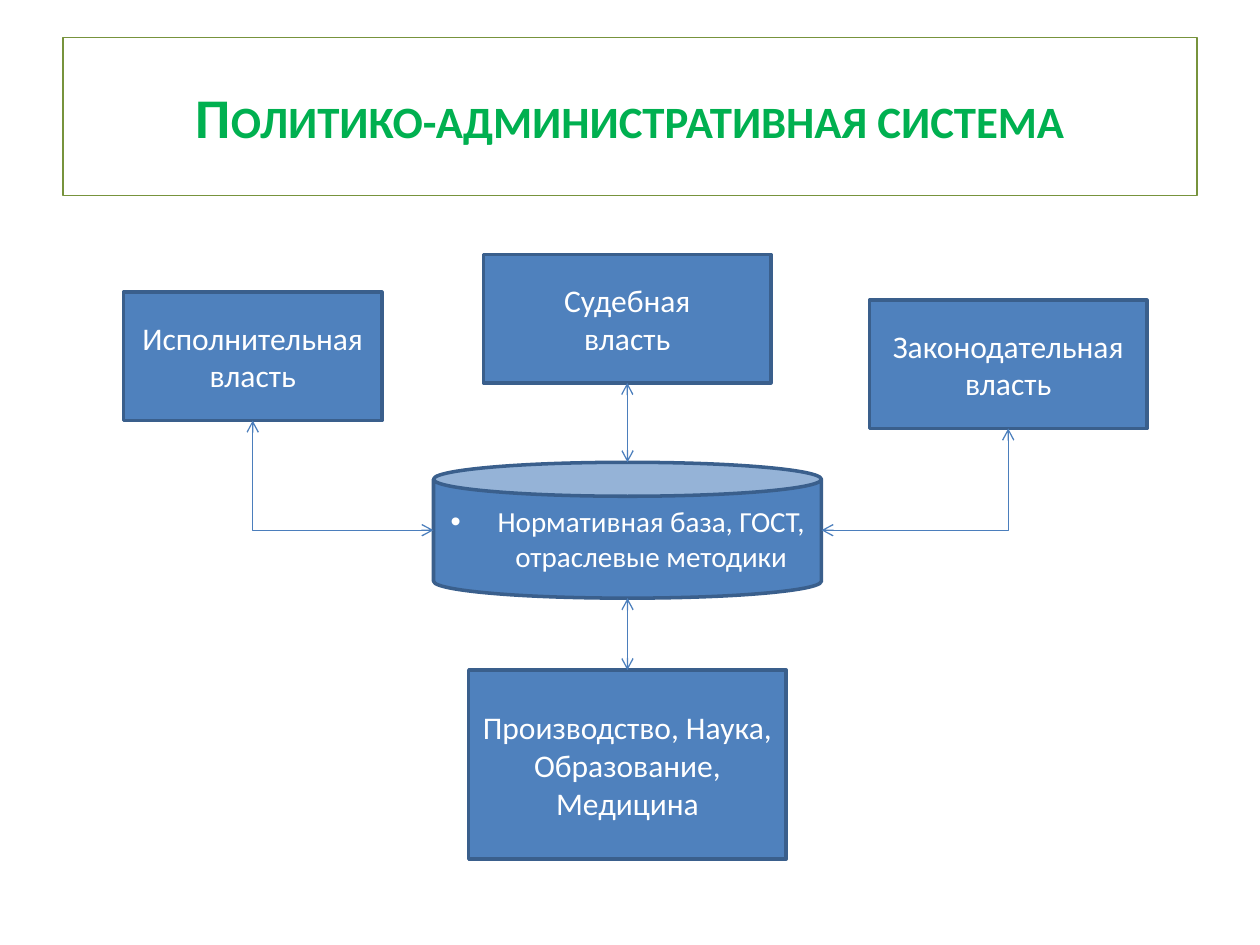
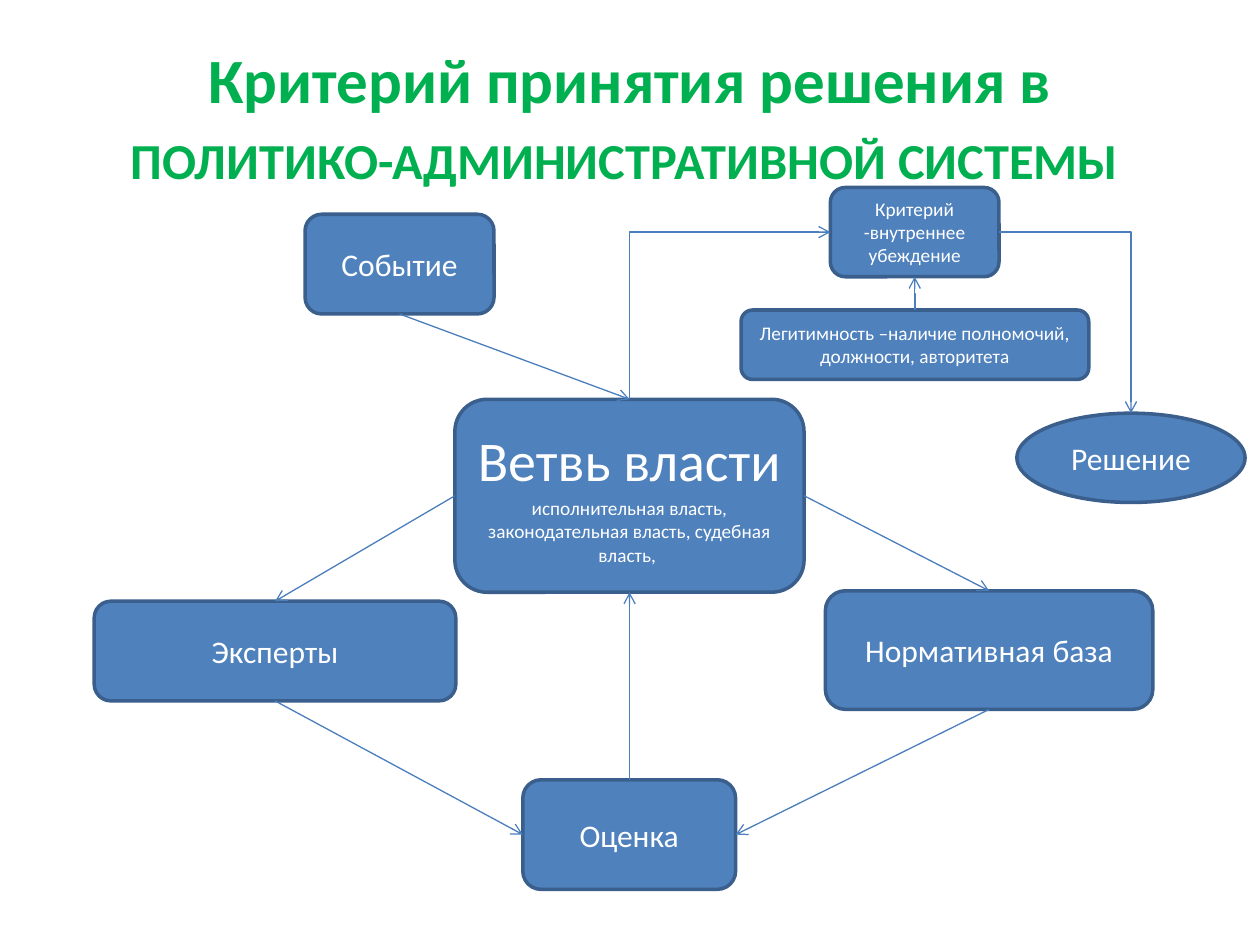
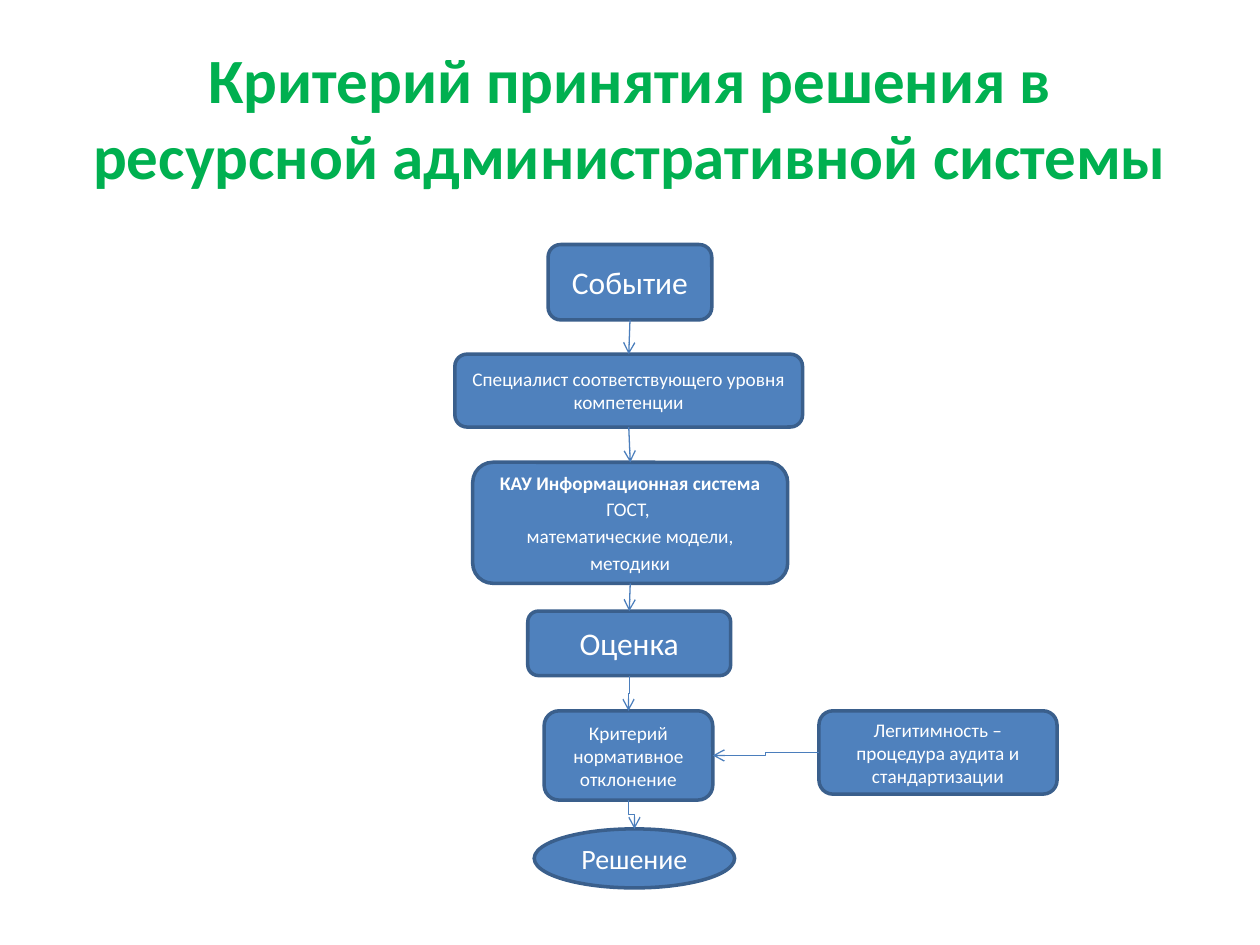
from lxml.etree import SubElement
from pptx import Presentation
from pptx.dml.color import RGBColor
from pptx.enum.shapes import MSO_CONNECTOR, MSO_SHAPE
from pptx.enum.text import MSO_ANCHOR, PP_ALIGN
from pptx.oxml.ns import qn
from pptx.util import Cm, Pt

# Shared look
FONT = "Calibri"
GREEN, FRAME = "00B050", "77933C"
BLUE, EDGE, WIRE, WHITE = "4F81BD", "3A5F8C", "4B7EBC", "FFFFFF"
HEAD = (1.27, 0.76, 22.86, 3.18)
RECT, ROUND = MSO_SHAPE.RECTANGLE, MSO_SHAPE.ROUNDED_RECTANGLE
OVAL, CAN = MSO_SHAPE.OVAL, MSO_SHAPE.CAN
TOP, LEFT, BOTTOM, RIGHT = range(4)


def paint(color, code):
    color.rgb = RGBColor.from_string(code)


def style(para, size, code, bold=False):
    para.alignment = PP_ALIGN.CENTER
    font = para.font
    font.name, font.size, font.bold = FONT, Pt(size), bold
    paint(font.color, code)


def frame(shape):
    text = shape.text_frame
    text.word_wrap = True
    text.vertical_anchor = MSO_ANCHOR.MIDDLE
    return text


def title(slide, box, runs, size, edge=None):
    """Green heading; each run is (text, small caps)."""
    shape = slide.shapes.add_textbox(*map(Cm, box))
    if edge:
        paint(shape.line.color, edge)
        shape.line.width = Pt(0.75)
    para = frame(shape).paragraphs[0]
    for words, small in runs:
        run = para.add_run()
        run.text = words
        if small:
            run._r.get_or_add_rPr().set("cap", "small")
    style(para, size, GREEN, True)


def bullet(para):
    props = para._p.get_or_add_pPr()
    props.set("marL", str(Cm(0.95)))
    props.set("indent", str(Cm(-0.95)))
    SubElement(props, qn("a:buFont")).set("typeface", "Arial")
    SubElement(props, qn("a:buChar")).set("char", "•")


def node(slide, box, kind, place, lines, gap=0, dot=False):
    """Blue shape placed within box; each line is (text, size[, bold])."""
    x, y, w, h = place
    shape = slide.shapes.add_shape(
        kind, Cm(box[0] + x), Cm(box[1] + y), Cm(w), Cm(h))
    shape.shadow.inherit = False
    shape.fill.solid()
    paint(shape.fill.fore_color, BLUE)
    paint(shape.line.color, EDGE)
    shape.line.width = Pt(2)
    text = frame(shape)
    for i, (words, size, *bold) in enumerate(lines):
        para = text.add_paragraph() if i else text.paragraphs[0]
        para.text = words
        if dot:
            bullet(para)
        if gap:
            para.space_before = Pt(round(size * gap, 1))
        style(para, size, WHITE, bool(bold))
    return shape


def spot(shape, side):
    """Middle of one side of a shape."""
    x, y = shape.left + shape.width // 2, shape.top + shape.height // 2
    return {TOP: (x, shape.top), BOTTOM: (x, shape.top + shape.height),
            LEFT: (shape.left, y), RIGHT: (shape.left + shape.width, y)}[side]


def finish(wire, ends):
    paint(wire.line.color, WIRE)
    wire.line.width = Pt(0.75)
    line = wire.line._get_or_add_ln()
    for end in ends:
        SubElement(line, qn(f"a:{end}End")).set("type", "arrow")
    SubElement(wire._element.spPr, qn("a:effectLst"))


def direct(slide, start, out, stop, into):
    """Straight arrow glued to both shapes."""
    wire = slide.shapes.add_connector(MSO_CONNECTOR.STRAIGHT, 0, 0, 0, 0)
    wire.begin_connect(start, out)
    wire.end_connect(stop, into)
    finish(wire, ["tail"])


def corner(slide, start, out, stop, into, ends):
    """One bend: leaves sideways, arrives vertically."""
    wire = slide.shapes.add_connector(
        MSO_CONNECTOR.ELBOW, *spot(start, out), *spot(stop, into))
    wire._element.spPr.prstGeom.set("prst", "bentConnector2")
    finish(wire, ends)


def step(slide, start, out, stop, into, ends=("tail",)):
    """Two bends halfway; vertical runs are a sideways step turned by 90°."""
    (x, y), (u, v) = spot(start, out), spot(stop, into)
    turn = out in (TOP, BOTTOM)
    if turn:
        midx, midy, dx, dy = (x + u) // 2, (y + v) // 2, (u - x) // 2, (v - y) // 2
        x, y, u, v = midx - dy, midy + dx, midx + dy, midy - dx
    wire = slide.shapes.add_connector(MSO_CONNECTOR.ELBOW, x, y, u, v)
    if turn:
        wire._element.spPr.xfrm.set("rot", "5400000")
    finish(wire, ends)


def powers(slide, box):
    """Branches of power around the shared rule base."""
    def block(place, *words):
        return node(slide, box, RECT, place, [(word, 18) for word in words])

    doer = block((0, 0.76, 5.21, 2.59), "Исполнительная власть")
    maker = block((15.04, 0.92, 5.59, 2.59), "Законодательная власть")
    court = block((7.26, 0, 5.79, 2.59), "Судебная", "власть")
    field = block((6.96, 8.38, 6.4, 3.81),
                  "Производство, Наука, Образование, Медицина")
    base = node(slide, box, CAN, (6.25, 4.19, 7.82, 2.74),
                [("Нормативная база, ГОСТ, отраслевые методики", 16.6)],
                0.2, True)
    both = ("head", "tail")
    corner(slide, base, LEFT, doer, BOTTOM, both)
    corner(slide, base, RIGHT, maker, BOTTOM, both)
    step(slide, court, BOTTOM, base, TOP, both)
    step(slide, base, BOTTOM, field, TOP, both)


def choice(slide, box):
    """Decision by a branch of power."""
    def block(place, words, size=18, kind=ROUND):
        return node(slide, box, kind, place, [(words, size)])

    event = block((4.25, 0.54, 3.81, 2.01), "Событие")
    norms = block((14.74, 8.13, 6.6, 2.39), "Нормативная база")
    guides = block((0, 8.34, 7.29, 2.01), "Эксперты")
    power = node(slide, box, ROUND, (7.27, 4.27, 7.04, 3.89), [
        ("Ветвь власти", 32),
        ("исполнительная власть, законодательная власть, судебная власть, ", 11),
    ], 0.2)
    rating = block((8.64, 11.94, 4.29, 2.21), "Оценка")
    result = block((18.6, 4.55, 4.6, 1.8), "Решение", kind=OVAL)
    test = block((14.84, 0, 3.4, 1.8), "Критерий -внутреннее убеждение", 11)
    right = block((13.04, 2.47, 7.01, 1.4),
                  "Легитимность –наличие полномочий, должности, авторитета", 11)
    for link in [(event, BOTTOM, power, TOP), (power, RIGHT, norms, TOP),
                 (power, LEFT, guides, TOP), (guides, BOTTOM, rating, LEFT),
                 (norms, BOTTOM, rating, RIGHT)]:
        direct(slide, *link)
    step(slide, rating, TOP, power, BOTTOM)
    step(slide, right, TOP, test, BOTTOM)
    corner(slide, test, LEFT, power, TOP, ["head"])
    corner(slide, test, RIGHT, result, TOP, ["tail"])


def chain(slide, box):
    """Decision by the resource system, from top to bottom."""
    def block(place, words, size=11, kind=ROUND, gap=0):
        return node(slide, box, kind, place, [(words, size)], gap)

    event = block((1.88, 0, 3.3, 1.52), "Событие", 18)
    expert = block((0, 2.21, 7.01, 1.47),
                   "Специалист соответствующего уровня компетенции")
    system = node(slide, box, ROUND, (0.36, 4.39, 6.35, 2.44), [
        ("КАУ Информационная система", 11, True), ("ГОСТ, ", 11),
        ("математические модели,", 11), ("методики", 11)], 0.2)
    rating = block((1.47, 7.39, 4.09, 1.3), "Оценка", 18)
    test = block((1.8, 9.4, 3.4, 1.8), "Критерий нормативное отклонение")
    result = block((1.6, 11.78, 4.04, 1.19), "Решение", 16, OVAL)
    right = block((7.34, 9.4, 4.8, 1.68),
                  "Легитимность – процедура аудита и стандартизации", gap=0.2)
    for above, below in [(event, expert), (expert, system), (system, rating)]:
        direct(slide, above, BOTTOM, below, TOP)
    for above, below in [(rating, test), (test, result)]:
        step(slide, above, BOTTOM, below, TOP)
    step(slide, right, LEFT, test, RIGHT)


def main():
    deck = Presentation()
    deck.slide_width, deck.slide_height = Cm(25.4), Cm(19.05)
    pages = [
        ([("Политико-административная система", True)], 32, FRAME,
         powers, (2.49, 5.13)),
        ([("Критерий принятия решения в ", False),
          ("политико-административной системы ", True)], 36, None,
         choice, (1.9, 3.78)),
        ([("Критерий принятия решения в ресурсной административной системы",
           False)], 36, None, chain, (9.17, 4.93)),
    ]
    for runs, size, edge, draw, box in pages:
        slide = deck.slides.add_slide(deck.slide_layouts[6])
        title(slide, HEAD, runs, size, edge)
        draw(slide, box)
    deck.save("out.pptx")


if __name__ == "__main__":
    main()
